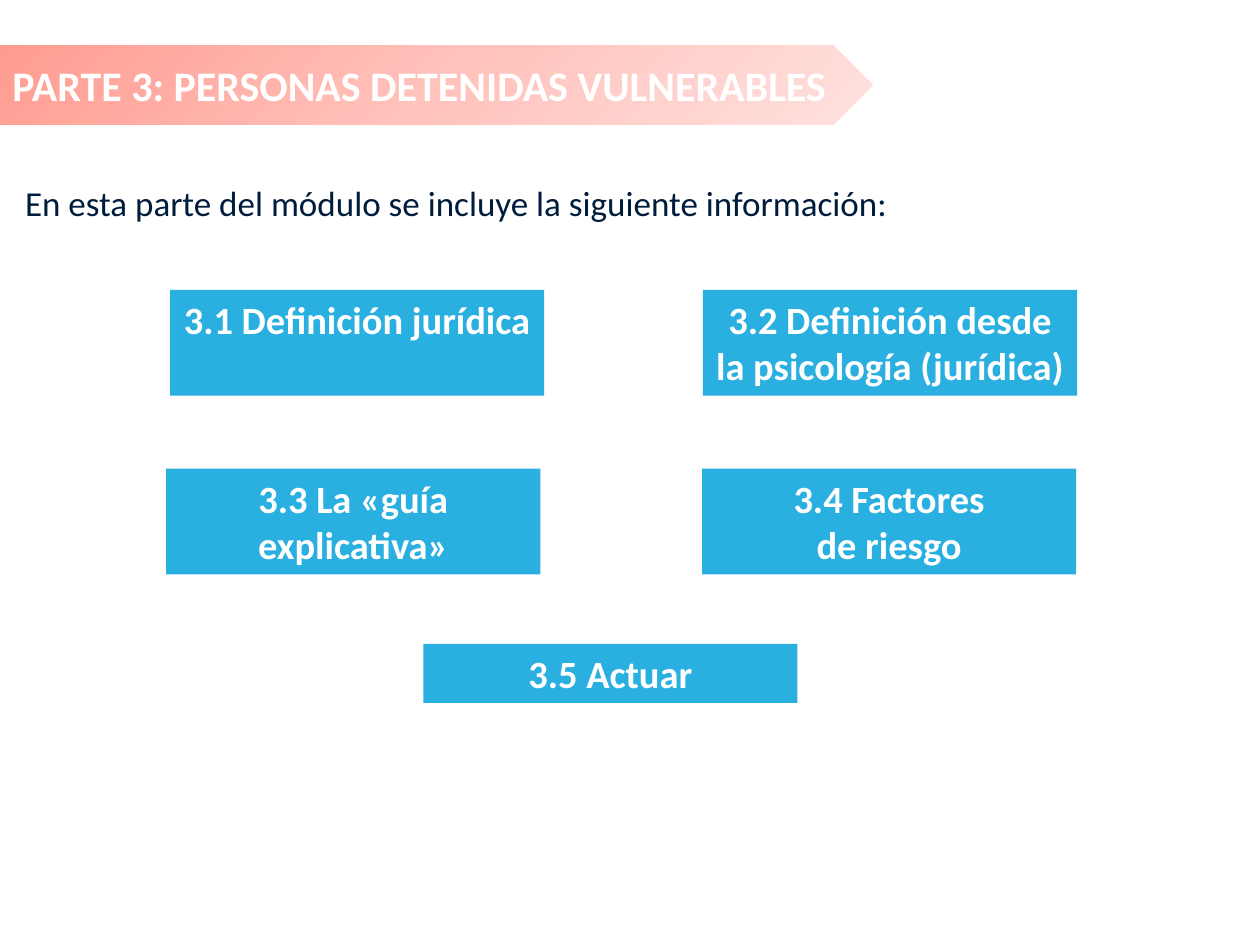
from lxml import etree
from pptx import Presentation
from pptx.dml.color import RGBColor
from pptx.enum import shapes, text
from pptx.oxml import ns
from pptx.util import Pt

WHITE = RGBColor(0xFF, 0xFF, 0xFF)
NAVY = RGBColor(0x00, 0x1C, 0x3D)
BLUE = RGBColor(0x00, 0xA2, 0xDB)
BANNER_STOPS = [
    (0, RGBColor(0xFF, 0x9C, 0x91)),
    (50, RGBColor(0xFF, 0xC2, 0xBC)),
    (100, RGBColor(0xFF, 0xE1, 0xDE)),
]
FONT = "Calibri"
TOPIC_WIDTH = 213.8
TOPIC_ALPHA = 84

# Left, top, height and wording of each topic
TOPICS = [
    (97.2, 165.6, 60.5, "3.1 Definición jurídica"),
    (401.7, 165.6, 60.5, "3.2 Definición desde la psicología (jurídica)"),
    (95, 267.8, 60.5, "3.3 La «guía explicativa»"),
    (401.2, 267.8, 60.5, "3.4 Factores\nde riesgo"),
    (241.9, 367.9, 33.8, "3.5 Actuar"),
]


def write(box, wording, size, color, align, anchor, bold=False):
    frame = box.text_frame
    frame.word_wrap = True
    frame.vertical_anchor = anchor
    frame.text = wording
    for para in frame.paragraphs:
        para.alignment = align
        for span in para.runs:
            span.font.name = FONT
            span.font.size = Pt(size)
            span.font.bold = bold
            span.font.color.rgb = color


def add_plain_shape(page, kind, left, top, width, height):
    box = page.shapes.add_shape(kind, Pt(left), Pt(top), Pt(width), Pt(height))
    box.shadow.inherit = False
    box.line.fill.background()
    return box


def add_topic(page, left, top, height, wording):
    box = add_plain_shape(page, shapes.MSO_SHAPE.RECTANGLE,
                          left, top, TOPIC_WIDTH, height)
    box.fill.solid()
    box.fill.fore_color.rgb = BLUE
    color = box.fill._xPr.find(".//" + ns.qn("a:srgbClr"))
    etree.SubElement(color, ns.qn("a:alpha"), val=str(TOPIC_ALPHA * 1000))
    write(box, wording, 22, WHITE, text.PP_ALIGN.CENTER,
          text.MSO_ANCHOR.TOP, bold=True)


def fill_from_corner(box, stops):
    """Radial gradient that starts at the top left corner."""
    box.fill.gradient()
    gradient = box.fill._xPr.find(ns.qn("a:gradFill"))
    for child in list(gradient):
        gradient.remove(child)
    stop_list = etree.SubElement(gradient, ns.qn("a:gsLst"))
    for position, color in stops:
        stop = etree.SubElement(stop_list, ns.qn("a:gs"), pos=str(position * 1000))
        etree.SubElement(stop, ns.qn("a:srgbClr"), val=str(color))
    shade = etree.SubElement(gradient, ns.qn("a:path"), path="circle")
    etree.SubElement(shade, ns.qn("a:fillToRect"), r="100000", b="100000")


def add_banner(page, wording):
    box = add_plain_shape(page, shapes.MSO_SHAPE.PENTAGON, 0, 25.9, 499, 45.4)
    fill_from_corner(box, BANNER_STOPS)
    write(box, wording, 24, WHITE, text.PP_ALIGN.LEFT,
          text.MSO_ANCHOR.MIDDLE, bold=True)


def add_intro(page, wording):
    box = page.shapes.add_textbox(Pt(7.2), Pt(100.1), Pt(683.3), Pt(33.8))
    write(box, wording, 20, NAVY, text.PP_ALIGN.JUSTIFY, text.MSO_ANCHOR.TOP)


def main():
    deck = Presentation()
    deck.slide_width, deck.slide_height = Pt(720), Pt(540)
    page = deck.slides.add_slide(deck.slide_layouts[6])

    # Topics
    for topic in TOPICS:
        add_topic(page, *topic)

    # Introduction and title
    add_intro(page, "En esta parte del módulo se incluye la siguiente información:")
    add_banner(page, "PARTE 3: PERSONAS DETENIDAS VULNERABLES")

    deck.save("out.pptx")


if __name__ == "__main__":
    main()
